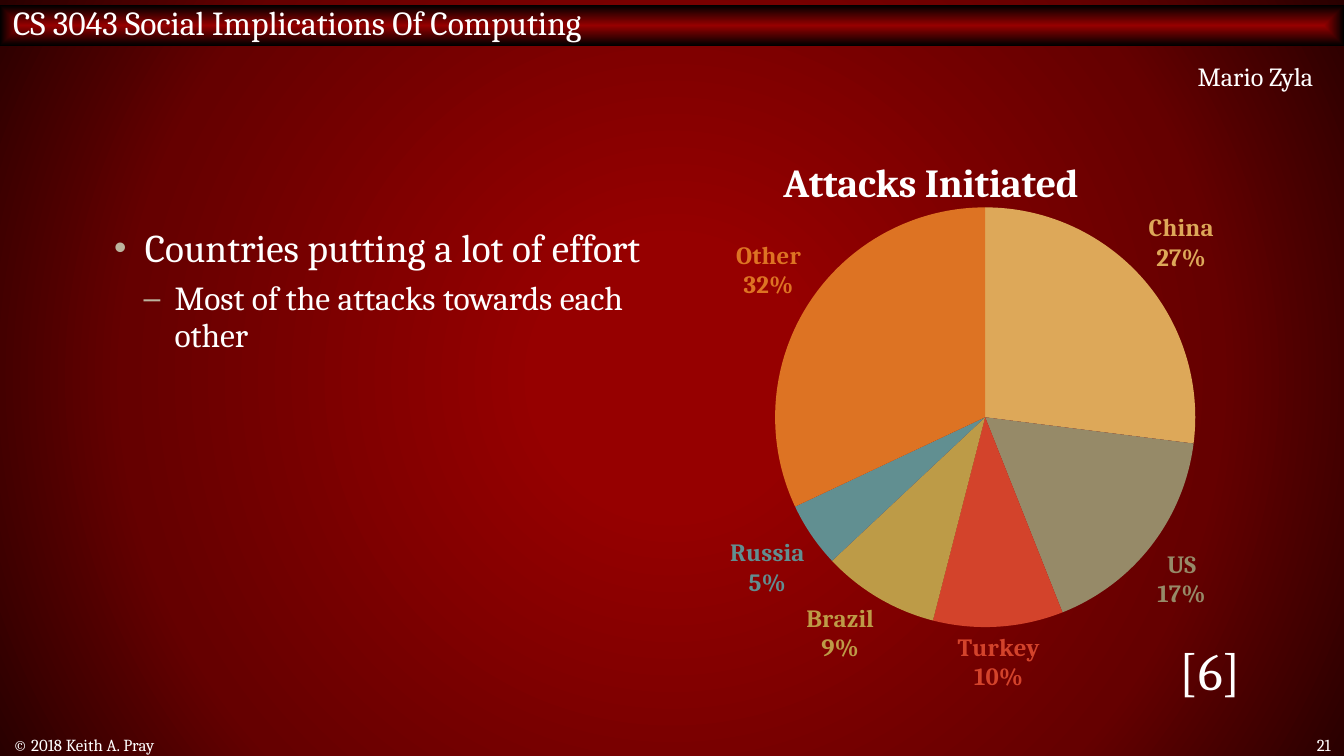
"""Build the slide on countries initiating attacks, with a pie chart."""
from lxml import etree
from pptx import Presentation
from pptx.chart.data import CategoryChartData
from pptx.dml.color import RGBColor
from pptx.enum.chart import XL_CHART_TYPE as ChartType, XL_LABEL_POSITION as LabelPosition
from pptx.enum.shapes import MSO_SHAPE as Shape
from pptx.enum.text import MSO_ANCHOR as Anchor, PP_ALIGN as Align
from pptx.oxml import parse_xml
from pptx.oxml.ns import nsdecls, qn
from pptx.util import Inches, Pt

FONT = "Cambria"
WHITE = RGBColor(0xFF, 0xFF, 0xFF)
BULLET = RGBColor(0xBC, 0xB4, 0x9E)
RED = RGBColor(0x96, 0x00, 0x00)
DARK_RED = RGBColor(0x65, 0x00, 0x00)
DEEP_RED = RGBColor(0x29, 0x00, 0x00)
BLACK = RGBColor(0x00, 0x00, 0x00)
ATTACKS = [
    ("China", 27, RGBColor(0xDD, 0xA8, 0x59)),
    ("US", 17, RGBColor(0x96, 0x8A, 0x68)),
    ("Turkey", 10, RGBColor(0xD3, 0x43, 0x2B)),
    ("Brazil", 9, RGBColor(0xBD, 0x9B, 0x47)),
    ("Russia", 5, RGBColor(0x61, 0x8F, 0x91)),
    ("Other", 32, RGBColor(0xDD, 0x73, 0x23)),
]


def set_font(font, size, color=WHITE, bold=False):
    for key, value in {"name": FONT, "size": Pt(size), "bold": bold}.items():
        setattr(font, key, value)
    font.color.rgb = color


def set_centre_gradient(owner, shape, stops):
    gradient = owner.xpath(".//a:gradFill")[0]
    stop_xml = "".join(
        f'<a:gs pos="{percent * 1000}"><a:srgbClr val="{color}"/></a:gs>'
        for percent, color in stops)
    gradient.getparent().replace(gradient, parse_xml(
        f'<a:gradFill {nsdecls("a")} rotWithShape="1"><a:gsLst>{stop_xml}</a:gsLst>'
        f'<a:path path="{shape}"><a:fillToRect l="50000" t="50000" r="50000" b="50000"/>'
        "</a:path></a:gradFill>"))


deck = Presentation()
deck.slide_width, deck.slide_height = Inches(10), Inches(10) * 9 // 16
slide = deck.slides.add_slide(deck.slide_layouts[6])
slide.background.fill.gradient()
set_centre_gradient(slide.element, "circle", [(17, RED), (71, DARK_RED), (100, DEEP_RED)])

banner = slide.shapes.add_shape(Shape.RECTANGLE, Inches(0), Inches(0.04), Inches(10), Inches(0.3))
banner.shadow.inherit = False
banner.line.fill.background()
banner.fill.gradient()
set_centre_gradient(banner.element, "shape", [(0, RED), (100, BLACK)])
course = banner.text_frame
course.margin_top = 0
course.vertical_anchor = Anchor.MIDDLE
course.text = "CS 3043 Social Implications Of Computing"
course.paragraphs[0].alignment = Align.LEFT
set_font(course.paragraphs[0].font, 18)

pie_data = CategoryChartData()
pie_data.categories = [country for country, share, color in ATTACKS]
pie_data.add_series("Attacks Initiated", [share for country, share, color in ATTACKS])
pie = slide.shapes.add_chart(
    ChartType.PIE, Inches(3.85), Inches(0.98), Inches(6.15), Inches(4.18), pie_data).chart
set_font(pie.font, 10)
pie.has_legend = False
pie.has_title = True
pie.chart_title.text_frame.text = "Attacks Initiated"
set_font(pie.chart_title.text_frame.paragraphs[0].runs[0].font, 21.3, bold=True)
pie.chart_title.include_in_layout = False

plot = pie.plots[0]
plot.vary_by_categories = True
for index, (country, share, color) in enumerate(ATTACKS):
    slice_ = plot.series[0].points[index]
    slice_.format.fill.solid()
    slice_.format.fill.fore_color.rgb = color
    slice_.format.line.fill.background()
    set_font(slice_.data_label.font, 13.3, color, bold=True)
    slice_.data_label.position = LabelPosition.OUTSIDE_END
for label in plot.series[0]._element.iter(qn("c:dLbl")):
    for flag, shown in {"showVal": 0, "showCatName": 1, "showPercent": 1}.items():
        label.find(qn(f"c:{flag}")).set("val", str(shown))
    etree.SubElement(label, qn("c:separator")).text = "\n"

LAYOUTS = [
    (".//c:title", "", {"x": 0.313, "y": 0.034}),
    (".//c:plotArea", '<c:layoutTarget val="inner"/>',
     {"x": 0.29, "y": 0.135, "w": 0.552, "h": 0.748}),
]
for place, target, box in LAYOUTS:
    part = pie._chartSpace.xpath(place)[0]
    for automatic in part.findall(qn("c:layout")):
        part.remove(automatic)
    modes = "".join(f'<c:{side}Mode val="edge"/>' for side in "xy")
    sizes = "".join(f'<c:{side} val="{value}"/>' for side, value in box.items())
    layout = parse_xml(f'<c:layout {nsdecls("c")}><c:manualLayout>{target}{modes}{sizes}'
                       "</c:manualLayout></c:layout>")
    part.insert(1 if place.endswith("title") else 0, layout)

LABELS = [
    ("© 2018 Keith A. Pray", 0, 5.46, 6.08, 0.16, 9, Align.LEFT, Anchor.MIDDLE, True, 1),
    ("21", 9.32, 5.46, 0.68, 0.16, 9, Align.RIGHT, Anchor.MIDDLE, True, 1),
    ("Mario Zyla", 7.49, 0.4, 2.38, 0.34, 14, Align.RIGHT, Anchor.TOP, True, 1),
    ("[6]", 8.68, 4.75, 0.69, 0.53, 28, Align.LEFT, Anchor.TOP, False, 0.9),
]
for text, left, top, width, height, size, align, anchor, wrap, spacing in LABELS:
    frame = slide.shapes.add_textbox(
        Inches(left), Inches(top), Inches(width), Inches(height)).text_frame
    frame.word_wrap = wrap
    frame.vertical_anchor = anchor
    frame.text = text
    line = frame.paragraphs[0]
    line.alignment = align
    line.line_spacing = spacing
    set_font(line.font, size)

POINTS = [
    ("Countries putting a lot of effort", 0, 0.23, "•", 21, 0),
    ("Most of the attacks towards each other", 1, 0.45, "–", 18, 6),
]
body = slide.shapes.add_textbox(Inches(0.75), Inches(1.65), Inches(4.21), Inches(3.5)).text_frame
body.word_wrap = True
for index, (text, level, indent, mark, size, before) in enumerate(POINTS):
    point = body.add_paragraph() if index else body.paragraphs[0]
    point.text = text
    point.level = level
    point.line_spacing = 0.9
    point.space_before = Pt(before)
    properties = point._p.get_or_add_pPr()
    properties.set("marL", str(Inches(indent)))
    properties.set("indent", str(-Inches(0.23)))
    for bullet in (f'<a:buClr {nsdecls("a")}><a:srgbClr val="{BULLET}"/></a:buClr>',
                   f'<a:buSzPct {nsdecls("a")} val="90000"/>',
                   f'<a:buFont {nsdecls("a")} typeface="Arial"/>',
                   f'<a:buChar {nsdecls("a")} char="{mark}"/>'):
        properties.append(parse_xml(bullet))
    set_font(point.font, size)

deck.save("out.pptx")
